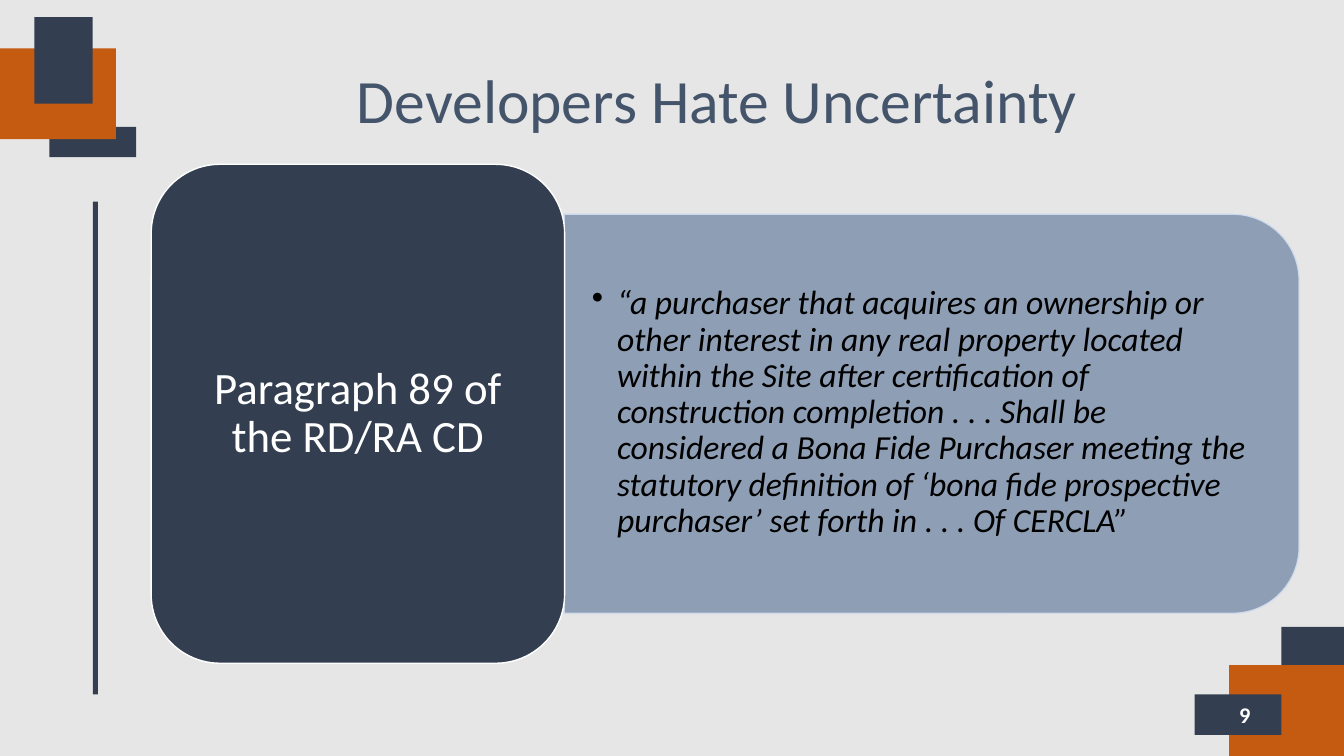
from lxml.etree import SubElement
from pptx import Presentation
from pptx.dml.color import RGBColor
from pptx.enum.shapes import MSO_SHAPE
from pptx.enum.text import MSO_ANCHOR, MSO_AUTO_SIZE, PP_ALIGN
from pptx.oxml.ns import qn
from pptx.util import Inches, Pt

NAVY, ORANGE, WHITE = "333F50", "C55A11", "FFFFFF"

presentation = Presentation()
presentation.slide_width = Inches(13.33)
presentation.slide_height = Inches(7.5)
slide = presentation.slides.add_slide(presentation.slide_layouts[5])
slide.background.fill.solid()
slide.background.fill.fore_color.rgb = RGBColor.from_string("E7E6E6")


def add_block(kind, left, top, width, height, fill, line=None):
    shape = slide.shapes.add_shape(
        kind, Inches(left), Inches(top), Inches(width), Inches(height))
    shape.shadow.inherit = False
    shape.fill.solid()
    shape.fill.fore_color.rgb = RGBColor.from_string(fill)
    if line:
        shape.line.color.rgb = RGBColor.from_string(line)
        shape.line.width = Pt(1)
    else:
        shape.line.fill.background()
    return shape


def write_text(shape, text, size, color, align, spacing=0.9, insets=(0.1, 0.05)):
    frame = shape.text_frame
    frame.word_wrap = True
    frame.auto_size = MSO_AUTO_SIZE.NONE
    frame.vertical_anchor = MSO_ANCHOR.MIDDLE
    frame.margin_left = frame.margin_right = Inches(insets[0])
    frame.margin_top = frame.margin_bottom = Inches(insets[1])
    frame.text = text
    paragraph = frame.paragraphs[0]
    paragraph.alignment = align
    paragraph.line_spacing = spacing
    paragraph.font.name = "Calibri"
    paragraph.font.size = Pt(size)
    paragraph.font.color.rgb = RGBColor.from_string(color)
    return paragraph


decorations = [
    (0.49, 1.26, 0.86, 0.3, NAVY),
    (12.71, 6.22, 0.62, 0.68, NAVY),
    (12.19, 6.6, 1.14, 0.9, ORANGE),
    (11.85, 6.89, 0.86, 0.4, NAVY),
    (0, 0.48, 1.15, 0.9, ORANGE),
    (0.34, 0.17, 0.58, 0.86, NAVY),
    (0.92, 2, 0.05, 4.89, NAVY),
]
for left, top, width, height, fill in decorations:
    add_block(MSO_SHAPE.RECTANGLE, left, top, width, height, fill)

title = slide.shapes.title
title.left, title.top = Inches(1.71), Inches(0.3)
title.width, title.height = Inches(10.81), Inches(1.45)
write_text(title, "Developers Hate Uncertainty", 44, "44546A", PP_ALIGN.CENTER)

quote_panel = add_block(
    MSO_SHAPE.ROUND_2_SAME_RECTANGLE, 7.26, 0.46, 3.96, 7.29, "8497B0", "D2DEEF")
quote_panel.rotation = 90
for color in quote_panel._element.spPr.iter(qn("a:srgbClr")):
    SubElement(color, qn("a:alpha"), val="90000")

quote_box = slide.shapes.add_textbox(
    Inches(5.6), Inches(2.31), Inches(7.1), Inches(3.57))
quote = write_text(
    quote_box,
    "“a purchaser that acquires an ownership or other interest in any real "
    "property located within the Site after certification of construction "
    "completion . . . Shall be considered a Bona Fide Purchaser meeting the "
    "statutory definition of ‘bona fide prospective purchaser’ set forth in "
    ". . . Of CERCLA”",
    24, "000000", PP_ALIGN.LEFT, insets=(0.27, 0.14))
quote.font.italic = True
properties = quote._p.get_or_add_pPr()
properties.set("marL", str(Inches(0.25)))
properties.set("indent", str(Inches(-0.25)))
bullet = properties.makeelement(qn("a:buChar"), {"char": "•"})
properties.find(qn("a:defRPr")).addprevious(bullet)

add_block(MSO_SHAPE.ROUNDED_RECTANGLE, 1.5, 1.63, 4.1, 4.95, NAVY, WHITE)
heading_box = slide.shapes.add_textbox(
    Inches(1.7), Inches(1.83), Inches(3.7), Inches(4.55))
write_text(heading_box, "Paragraph 89 of the RD/RA CD", 32, WHITE,
           PP_ALIGN.CENTER, insets=(0.13, 0.07))

number_box = slide.shapes.add_textbox(
    Inches(9.5), Inches(6.89), Inches(3), Inches(0.4))
number = write_text(number_box, "9", 16, WHITE, PP_ALIGN.RIGHT, spacing=1.0)
number.font.bold = True

presentation.save("out.pptx")
